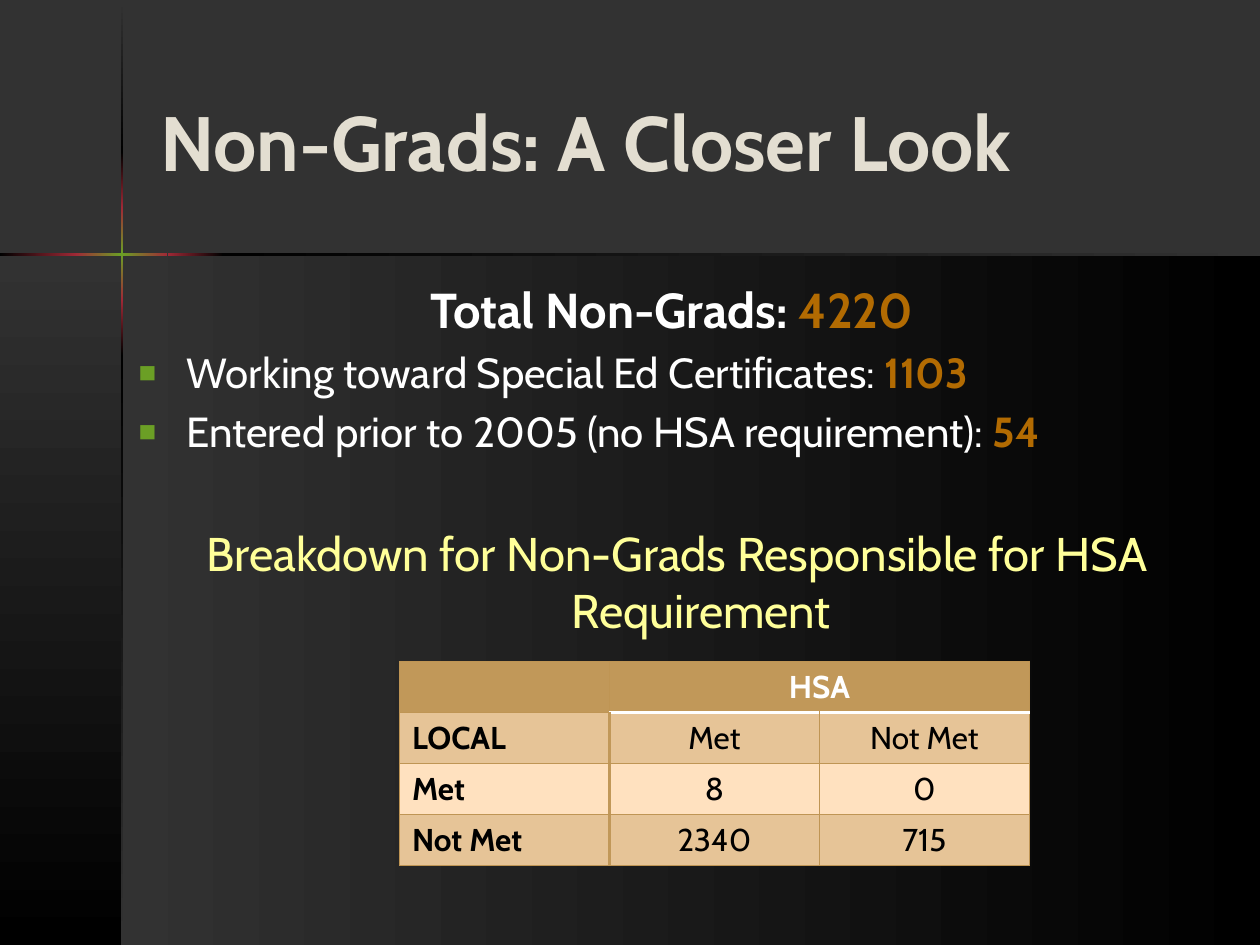
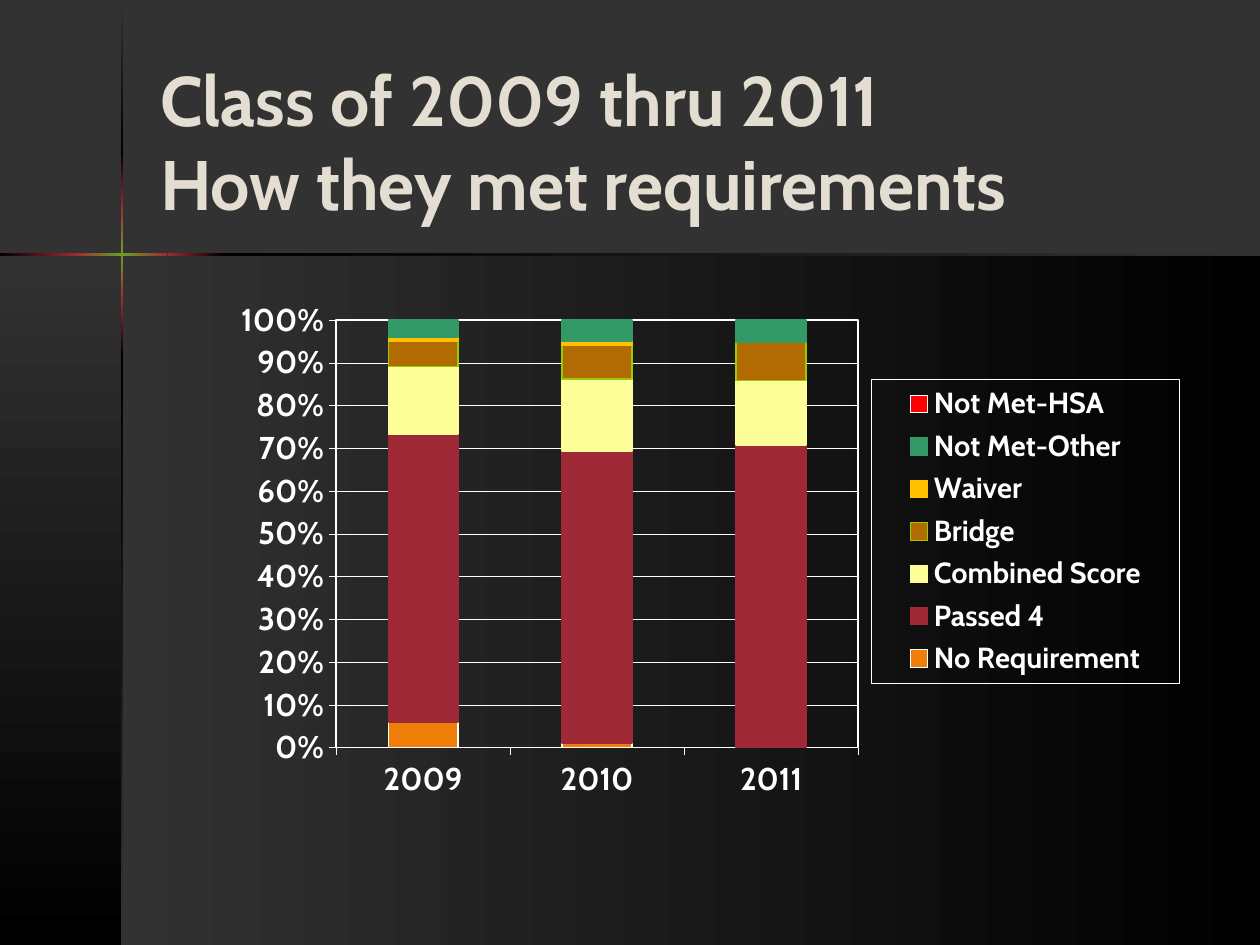
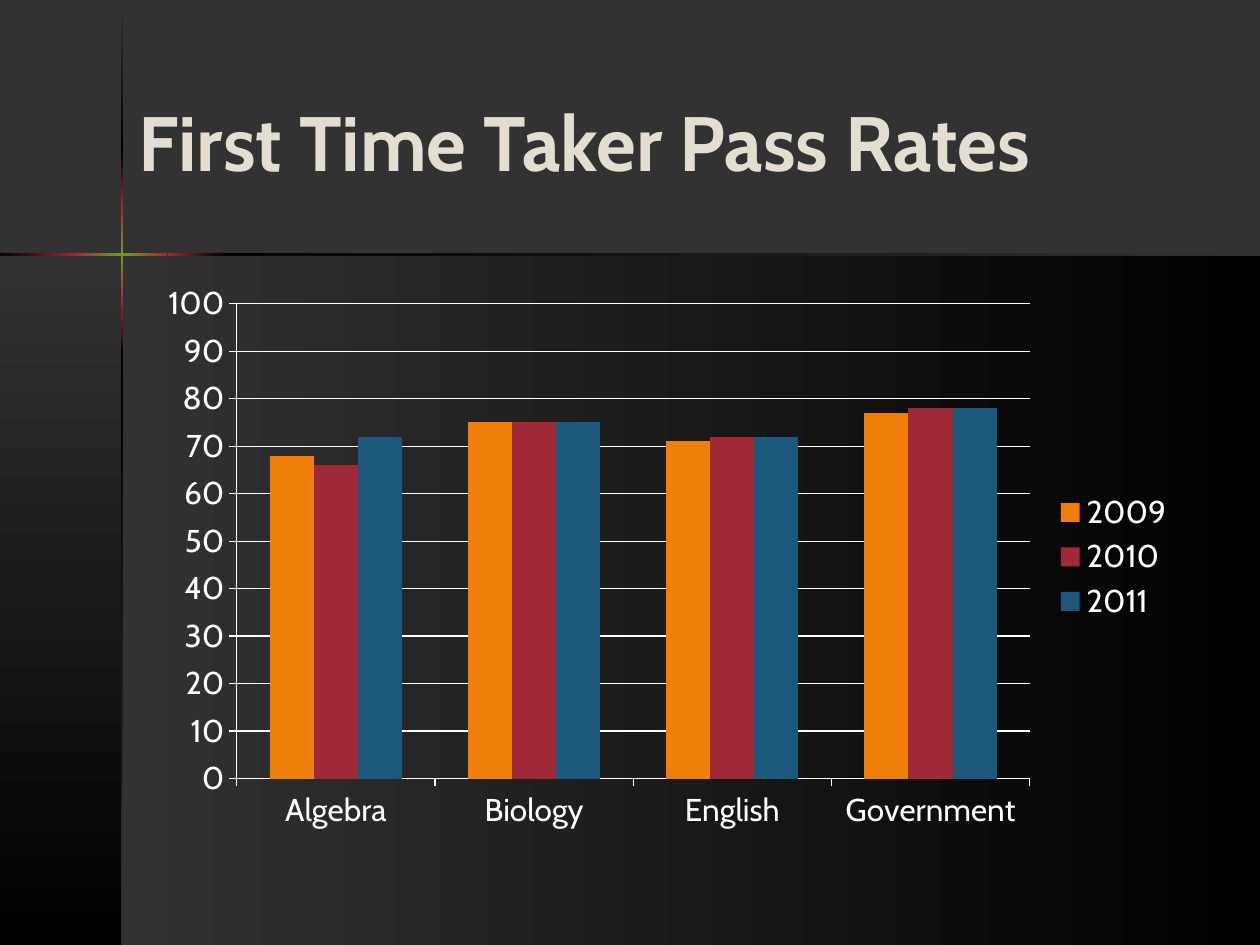
from pptx import Presentation
from pptx.chart.data import CategoryChartData
from pptx.dml.color import RGBColor
from pptx.enum.chart import XL_CHART_TYPE as CHART, XL_LEGEND_POSITION as LEGEND, XL_TICK_MARK as TICK
from pptx.enum.shapes import MSO_SHAPE as SHAPE
from pptx.enum.text import MSO_ANCHOR as ANCHOR, MSO_AUTO_SIZE as AUTO, PP_ALIGN as ALIGN
from pptx.oxml import parse_xml
from pptx.oxml.ns import nsdecls
from pptx.util import Inches, Pt

FONT = "Cabin"
WIDTH, HEIGHT = 10, 7.5
GREY, BLACK, WHITE, CREAM = "323232", "000000", "FFFFFF", "E3DED1"
RED, GREEN, ORANGE, BROWN, YELLOW = "9F2936", "6B9F25", "F07F09", "B26B02", "FFFF99"
TAN, TAN_LINE, TAN_MID, TAN_LIGHT = "C19859", "BF9554", "E6C497", "FFE1BF"

# Cross of two thin bars: (start, end, colours along the bar)
CROSS_X, CROSS_Y, CROSS_WEIGHT = 0.96, 2.01, 0.02
GLOW = (RED, GREEN, RED)
VERTICAL = [(0.01, 1.21, (GREY, BLACK)), (2.82, HEIGHT, (BLACK, GREY)),
            (2.38, 2.82, (RED, BLACK)), (1.21, 1.65, (BLACK, RED)),
            (1.65, 2.38, GLOW)]
HORIZONTAL = [(1.77, WIDTH, (BLACK, GREY)), (0, 0.61, (BLACK, RED)),
              (1.33, 1.77, (RED, BLACK)), (0.6, 1.33, GLOW)]

TITLE_BOX = (1.17, 0.33, 8.25, 1.57)
WIDE_TITLE_BOX = (1, 0.33, 8.83, 1.57)
BODY_BOX = (1, 2.17, 8.75, 4.5)
TABLE_BOX = (3.17, 5.25, 5, 1.62)
METHODS_BOX = (1.22, 2.22, 8.14, 4.39)
RATES_BOX = (1.17, 2.17, 8.25, 4.5)

# (label, figure, size, label colour, bulleted, space before)
NON_GRADS = [
    ("Total Non-Grads: ", "4220 ", 28, WHITE, False, 5.6),
    ("Working toward Special Ed Certificates: ", "1103", 24, WHITE, True, 4.8),
    ("Entered prior to 2005 (no HSA requirement): ", "54", 24, WHITE, True, 4.8),
    ("Breakdown for Non-Grads Responsible for HSA Requirement", "", 27, YELLOW, False, 39),
]
BREAKDOWN = [("", "HSA", ""),
             ("LOCAL", "Met", "Not Met"),
             ("Met", "8", "0"),
             ("Not Met", "2340", "715")]
ROW_FILLS = (TAN, TAN_MID, TAN_LIGHT, TAN_MID)

YEARS = ("2009", "2010", "2011")
# (name, values, fill, outline)
METHODS = [
    ("No Requirement", (6, 1, 0), ORANGE, WHITE),
    ("Passed 4", (68, 69, 70), RED, RED),
    ("Combined Score", (16, 17, 15), YELLOW, YELLOW),
    ("Bridge", (6, 8, 9), BROWN, "99CC00"),
    ("Waiver", (1, 1, 0), "FFC000", "FFC000"),
    ("Not Met-Other", (4, 5, 5), "339966", "339966"),
    ("Not Met-HSA", (0, 0, 0), "FF0000", WHITE),
]
SUBJECTS = ("Algebra", "Biology", "English", "Government")
PASS_RATES = [
    ("2009", (68, 75, 71, 77), ORANGE, None),
    ("2010", (66, 75, 72, 78), RED, None),
    ("2011", (72, 75, 72, 78), "1B587C", None),
]


def color(hex_code):
    return RGBColor.from_string(hex_code)


def inches(box):
    return [Inches(length) for length in box]


def style(font, size, hex_code, bold=False):
    font.name, font.size, font.bold = FONT, Pt(size), bold
    font.color.rgb = color(hex_code)


def place(shape, box):
    shape.left, shape.top, shape.width, shape.height = inches(box)


def outline(line, hex_code, points):
    line.color.rgb = color(hex_code)
    line.width = Pt(points)


def add_band(slide, box, colors, downward):
    band = slide.shapes.add_shape(SHAPE.RECTANGLE, *inches(box))
    band.shadow.inherit = False
    band.line.fill.background()
    band.fill.background()
    step = 100000 // (len(colors) - 1)
    stops = "".join(f'<a:gs pos="{i * step}"><a:srgbClr val="{c}"/></a:gs>'
                    for i, c in enumerate(colors))
    plain = band.element.spPr.find("{*}noFill")
    plain.getparent().replace(plain, parse_xml(
        f'<a:gradFill {nsdecls("a")} rotWithShape="1"><a:gsLst>{stops}</a:gsLst>'
        f'<a:lin ang="{5400000 if downward else 0}" scaled="0"/></a:gradFill>'))
    return band


def dress_master(prs, slide):
    """Draw the bands on a slide, then move them to the master so all slides share them."""
    master = prs.slide_master
    master.background.fill.solid()
    master.background.fill.fore_color.rgb = color(GREY)
    edge_x, edge_y = CROSS_X + CROSS_WEIGHT / 2, CROSS_Y + CROSS_WEIGHT / 2
    parts = [((edge_x, edge_y, WIDTH - edge_x, HEIGHT - edge_y), (GREY, BLACK), False),
             ((0, edge_y, edge_x, HEIGHT - edge_y), (GREY, BLACK), True)]
    parts += [((CROSS_X, start, CROSS_WEIGHT, end - start), colors, True)
              for start, end, colors in VERTICAL]
    parts += [((start, CROSS_Y, end - start, CROSS_WEIGHT), colors, False)
              for start, end, colors in HORIZONTAL]
    for position, part in enumerate(parts, start=2):
        master.shapes.element.insert(position, add_band(slide, *part).element)


def set_title(slide, text, size=44, box=TITLE_BOX):
    title = slide.shapes.title
    place(title, box)
    frame = title.text_frame
    frame.text = text
    frame.auto_size = AUTO.NONE
    frame.vertical_anchor = ANCHOR.MIDDLE
    frame.paragraphs[0].alignment = ALIGN.LEFT
    for run in frame.paragraphs[0].runs:
        style(run.font, size, CREAM, True)


def set_bullet(paragraph, bulleted):
    props = paragraph._p.get_or_add_pPr()
    props.set("marL", str(Inches(0.38)))
    props.set("indent", str(-Inches(0.38)))
    marks = [f'<a:buClr {nsdecls("a")}><a:srgbClr val="{GREEN}"/></a:buClr>',
             f'<a:buSzPct {nsdecls("a")} val="70000"/>',
             f'<a:buChar {nsdecls("a")} char="■"/>']
    for mark in marks if bulleted else [f'<a:buNone {nsdecls("a")}/>']:
        props.append(parse_xml(mark))


def fill_body(body):
    place(body, BODY_BOX)
    frame = body.text_frame
    frame.text = "\n".join(row[0] for row in NON_GRADS)
    frame.auto_size = AUTO.NONE
    for paragraph, row in zip(frame.paragraphs, NON_GRADS):
        _, figure, size, hex_code, bulleted, space = row
        paragraph.alignment = ALIGN.LEFT if bulleted else ALIGN.CENTER
        paragraph.space_before = Pt(space)
        set_bullet(paragraph, bulleted)
        style(paragraph.runs[0].font, size, hex_code, size == 28)
        if figure:
            run = paragraph.add_run()
            run.text = figure
            style(run.font, size, BROWN, True)


def set_borders(cell, row, col):
    thin, thick, white = (TAN_LINE, 0.75), (TAN, 2), (WHITE, 2)
    sides = {"L": thick if row and col == 1 else thin,
             "R": thick if row and col == 0 else thin,
             "T": white if row == 1 and col else thin,
             "B": white if row == 0 and col else thin}
    props = cell._tc.get_or_add_tcPr()
    for position, (side, (hex_code, points)) in enumerate(sides.items()):
        props.insert(position, parse_xml(
            f'<a:ln{side} {nsdecls("a")} w="{Pt(points)}"><a:solidFill>'
            f'<a:srgbClr val="{hex_code}"/></a:solidFill></a:ln{side}>'))


def add_breakdown(slide):
    table = slide.shapes.add_table(len(BREAKDOWN), len(BREAKDOWN[0]), *inches(TABLE_BOX)).table
    for row, texts in enumerate(BREAKDOWN):
        for col, text in enumerate(texts):
            cell = table.cell(row, col)
            cell.fill.solid()
            cell.fill.fore_color.rgb = color(ROW_FILLS[row])
            set_borders(cell, row, col)
            cell.text = text
            if row == 0:
                cell.vertical_anchor = ANCHOR.MIDDLE
            paragraph = cell.text_frame.paragraphs[0]
            paragraph.alignment = ALIGN.CENTER if col else ALIGN.LEFT
            style(paragraph.font, 18, WHITE if row == 0 else BLACK, row == 0 or col == 0)
            for run in paragraph.runs:
                style(run.font, 18, WHITE if row == 0 else BLACK, row == 0 or col == 0)
    table.cell(0, 1).merge(table.cell(0, 2))


def add_columns(slide, kind, box, categories, series, bold, line_width):
    data = CategoryChartData()
    data.categories = categories
    for name, values, *_ in series:
        data.add_series(name, values)
    chart = slide.shapes.add_chart(kind, *inches(box), data).chart
    chart.has_title = False
    style(chart.font, 18, WHITE, bold)
    chart.has_legend = True
    chart.legend.position = LEGEND.RIGHT
    chart.legend.include_in_layout = False
    plot = chart.plots[0]
    plot.vary_by_categories = False
    plot.gap_width = 150
    plot.overlap = 100 if kind == CHART.COLUMN_STACKED_100 else 0
    for bars, (_, _, fill, edge) in zip(plot.series, series):
        bars.format.fill.solid()
        bars.format.fill.fore_color.rgb = color(fill)
        if edge:
            outline(bars.format.line, edge, 1)
    for axis in (chart.category_axis, chart.value_axis):
        axis.major_tick_mark, axis.minor_tick_mark = TICK.OUTSIDE, TICK.NONE
        style(axis.tick_labels.font, 18, WHITE, bold)
        outline(axis.format.line, WHITE, line_width)
    chart.value_axis.has_major_gridlines = True
    outline(chart.value_axis.major_gridlines.format.line, WHITE, line_width)
    return chart


def set_layout(element, position, shares, inner=False):
    """Fix a chart part at x, y, w, h given as shares of the chart."""
    for old in element.findall("{*}layout"):
        element.remove(old)
    target = '<c:layoutTarget val="inner"/>' if inner else ""
    modes = '<c:xMode val="edge"/><c:yMode val="edge"/>'
    sizes = "".join(f'<c:{key} val="{share}"/>' for key, share in zip("xywh", shares))
    element.insert(position, parse_xml(
        f'<c:layout {nsdecls("c")}><c:manualLayout>{target}{modes}{sizes}'
        '</c:manualLayout></c:layout>'))


def frame_xml(points):
    return parse_xml(
        f'<c:spPr {nsdecls("c", "a")}><a:noFill/><a:ln w="{Pt(points)}"><a:solidFill>'
        f'<a:srgbClr val="{WHITE}"/></a:solidFill></a:ln></c:spPr>')


def add_methods(slide):
    chart = add_columns(slide, CHART.COLUMN_STACKED_100, METHODS_BOX, YEARS, METHODS, True, 0.25)
    labels = chart.value_axis.tick_labels
    labels.number_format, labels.number_format_is_linked = "0%", False
    style(chart.legend.font, 16.6, WHITE, True)
    plot_area = chart.element.xpath(".//c:plotArea")[0]
    set_layout(plot_area, 0, (0.178, 0.073, 0.509, 0.773), inner=True)
    plot_area.append(frame_xml(1))
    legend = chart.element.xpath(".//c:legend")[0]
    set_layout(legend, 1, (0.7, 0.18, 0.3, 0.55))
    legend.find("{*}overlay").addnext(frame_xml(0.25))


def add_pass_rates(slide):
    chart = add_columns(slide, CHART.COLUMN_CLUSTERED, RATES_BOX, SUBJECTS, PASS_RATES, False, 0.75)
    axis = chart.value_axis
    axis.minimum_scale, axis.maximum_scale, axis.major_unit = 0, 100, 10
    style(chart.legend.font, 18, WHITE)


def main():
    prs = Presentation()
    prs.slide_width, prs.slide_height = Inches(WIDTH), Inches(HEIGHT)
    title_and_list, title_only = prs.slide_layouts[1], prs.slide_layouts[5]

    closer_look = prs.slides.add_slide(title_and_list)
    dress_master(prs, closer_look)
    set_title(closer_look, "Non-Grads: A Closer Look")
    fill_body(closer_look.placeholders[1])
    add_breakdown(closer_look)

    requirements = prs.slides.add_slide(title_only)
    set_title(requirements, "Class of 2009 thru 2011\vHow they met requirements", size=40)
    add_methods(requirements)

    first_time = prs.slides.add_slide(title_only)
    set_title(first_time, "First Time Taker Pass Rates", box=WIDE_TITLE_BOX)
    add_pass_rates(first_time)

    prs.save("out.pptx")


if __name__ == "__main__":
    main()
